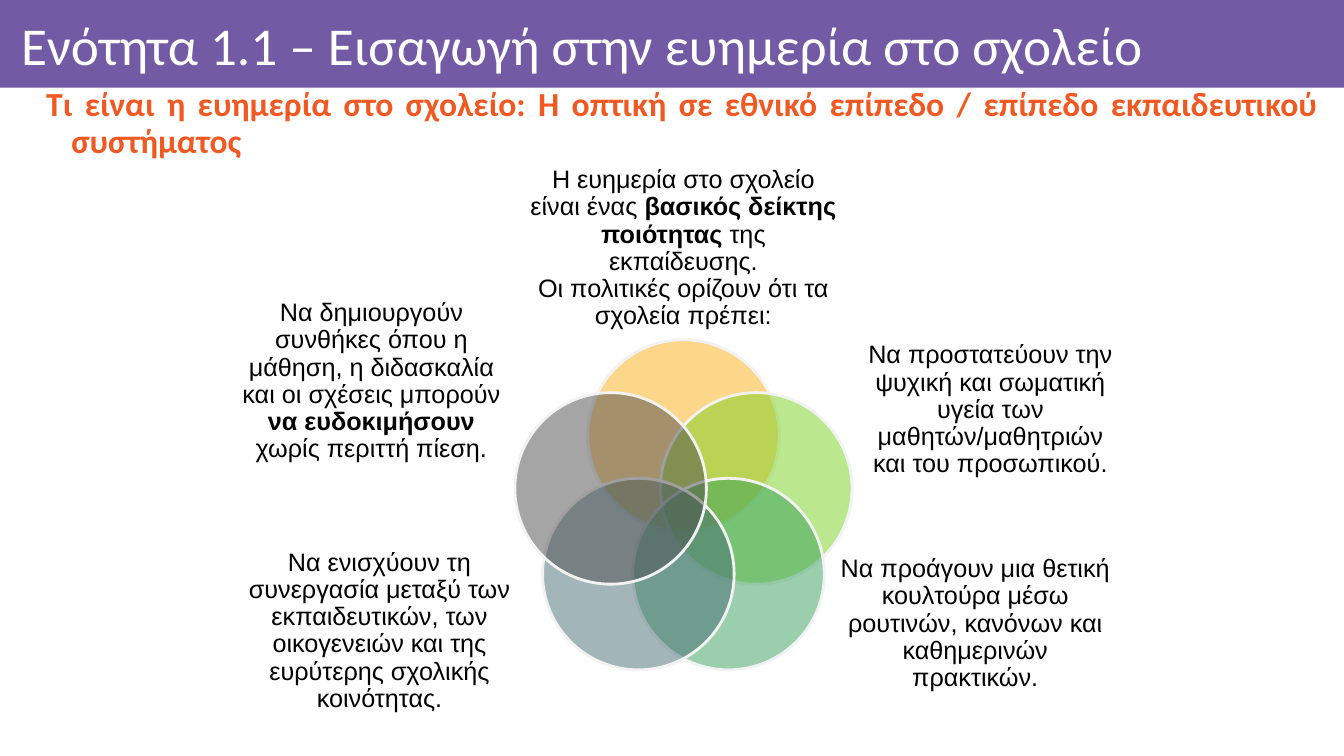
from math import cos, pi, sin

from lxml import etree
from pptx import Presentation
from pptx.dml.color import RGBColor
from pptx.enum.shapes import MSO_SHAPE
from pptx.enum.text import MSO_ANCHOR, MSO_AUTO_SIZE, PP_ALIGN
from pptx.oxml.ns import qn
from pptx.util import Pt

RECT, OVAL = MSO_SHAPE.RECTANGLE, MSO_SHAPE.OVAL
MIDDLE = MSO_ANCHOR.MIDDLE
NO_FIT = MSO_AUTO_SIZE.NONE
LEFT, CENTER, JUST = PP_ALIGN.LEFT, PP_ALIGN.CENTER, PP_ALIGN.JUSTIFY

WHITE = RGBColor(0xFF, 0xFF, 0xFF)
BLACK = RGBColor(0, 0, 0)
PURPLE = RGBColor(0x73, 0x5A, 0xA5)
ORANGE = RGBColor(0xF0, 0x5A, 0x22)
PALE = RGBColor(0xF2, 0xF2, 0xF2)
AMBER = RGBColor(0xFA, 0xAE, 0x15)
LIME = RGBColor(0x79, 0xD1, 0x21)
GREEN = RGBColor(0x36, 0x9F, 0x5A)
TEAL = RGBColor(0x46, 0x6C, 0x73)
GRAY = RGBColor(0x4D, 0x4D, 0x4F)

WIDTH, HEIGHT = 960, 540
SIZE = 136.8
RING = 54.7
BLANK = 19

PETALS = [
    (AMBER, (378.7, 119.5, 218.9, 115.9), 0,
     "Η ευημερία στο σχολείο είναι ένας *βασικός δείκτης ποιότητας *της εκπαίδευσης."
     "\nΟι πολιτικές ορίζουν ότι τα σχολεία πρέπει:"),
    (LIME, (619.2, 252.7, 176.4, 99.4), BLANK,
     "Να προστατεύουν την ψυχική και σωματική υγεία των μαθητών/μαθητριών και του προσωπικού."),
    (GREEN, (597.6, 405.4, 198, 99.4), BLANK,
     "Να προάγουν μια θετική κουλτούρα μέσω ρουτινών, κανόνων και καθημερινών πρακτικών."),
    (TEAL, (164.2, 401, 213.8, 99.4), 0,
     "Να ενισχύουν τη συνεργασία μεταξύ των εκπαιδευτικών, των οικογενειών και της "
     "ευρύτερης σχολικής κοινότητας."),
    (GRAY, (166.3, 214.6, 198, 115.9), 0,
     "Να δημιουργούν συνθήκες όπου η μάθηση, η διδασκαλία και οι σχέσεις μπορούν "
     "*να ευδοκιμήσουν *χωρίς περιττή πίεση."),
]


def points(*nums):
    return [Pt(n) for n in nums]


def set_frame(shape, insets):
    frame = shape.text_frame
    frame.auto_size = NO_FIT
    frame.word_wrap = True
    frame.vertical_anchor = MIDDLE
    (frame.margin_left, frame.margin_top,
     frame.margin_right, frame.margin_bottom) = points(*insets)
    return frame.paragraphs[0]


def set_font(para, name, size, color, align):
    para.font.name = name
    para.font.size = Pt(size)
    para.font.color.rgb = color
    para.alignment = align
    para.line_spacing = 0.9


def add_header(slide, left, top, width, height):
    bar = slide.shapes.add_shape(RECT, *points(left, top, width, height))
    bar.shadow.inherit = False
    bar.fill.solid()
    bar.fill.fore_color.rgb = PURPLE
    bar.line.fill.background()
    title = slide.shapes.title
    title.element.addprevious(bar.element)
    title.left, title.top, title.width, title.height = points(
        left + 7.9, top + 6.5, width - 19.7, height - 6.5)
    para = set_frame(title, (7.2, 4.3, 4.3, 4.3))
    para.text = "Ενότητα 1.1 – Εισαγωγή στην ευημερία στο σχολείο"
    set_font(para, "Calibri", 38, WHITE, LEFT)


def add_lead(slide, left, top, width, height):
    box = slide.shapes.add_textbox(*points(left, top, width, height))
    para = set_frame(box, (7.2, 3.6, 7.2, 3.6))
    para.text = ("Τι είναι η ευημερία στο σχολείο: Η οπτική σε εθνικό επίπεδο / "
                 "επίπεδο εκπαιδευτικού συστήματος")
    set_font(para, "Calibri", 24, ORANGE, JUST)
    para.font.bold = True
    para.space_before = Pt(10)
    props = para._p.get_or_add_pPr()
    props.set("marL", str(Pt(36)))
    props.set("indent", str(Pt(-18)))


def add_disc(group, left, top, color):
    disc = group.shapes.add_shape(OVAL, *points(left, top, SIZE, SIZE))
    disc.shadow.inherit = False
    disc.fill.solid()
    disc.fill.fore_color.rgb = color
    tint = disc.element.spPr.find(qn("a:solidFill"))[0]
    etree.SubElement(tint, qn("a:alpha")).set("val", "50000")
    disc.line.color.rgb = PALE
    disc.line.width = Pt(2)


def add_label(group, box, bottom, text):
    label = group.shapes.add_textbox(*points(*box))
    para = set_frame(label, (0, 0, 0, bottom))
    set_font(para, "Arial", 18, BLACK, CENTER)
    for row, line in enumerate(text.split("\n")):
        if row:
            para.add_line_break()
        for part, words in enumerate(line.split("*")):
            run = para.add_run()
            run.text = words
            run.font.bold = part % 2 == 1


def add_wheel(slide, mid_x, mid_y):
    group = slide.shapes.add_group_shape()
    for num, (color, box, bottom, text) in enumerate(PETALS):
        angle = 2 * pi * num / len(PETALS)
        left = round(mid_x + RING * sin(angle) - SIZE / 2, 1)
        top = round(mid_y - RING * cos(angle) - SIZE / 2, 1)
        add_disc(group, left, top, color)
        add_label(group, box, bottom, text)


def main():
    deck = Presentation()
    deck.slide_width, deck.slide_height = points(WIDTH, HEIGHT)
    slide = deck.slides.add_slide(deck.slide_layouts[5])
    add_header(slide, 0, 0, WIDTH, 62.6)
    add_lead(slide, 7.9, 67, 940.3, 43.2)
    add_wheel(slide, 488.2, 365.8)
    deck.save("out.pptx")


if __name__ == "__main__":
    main()
